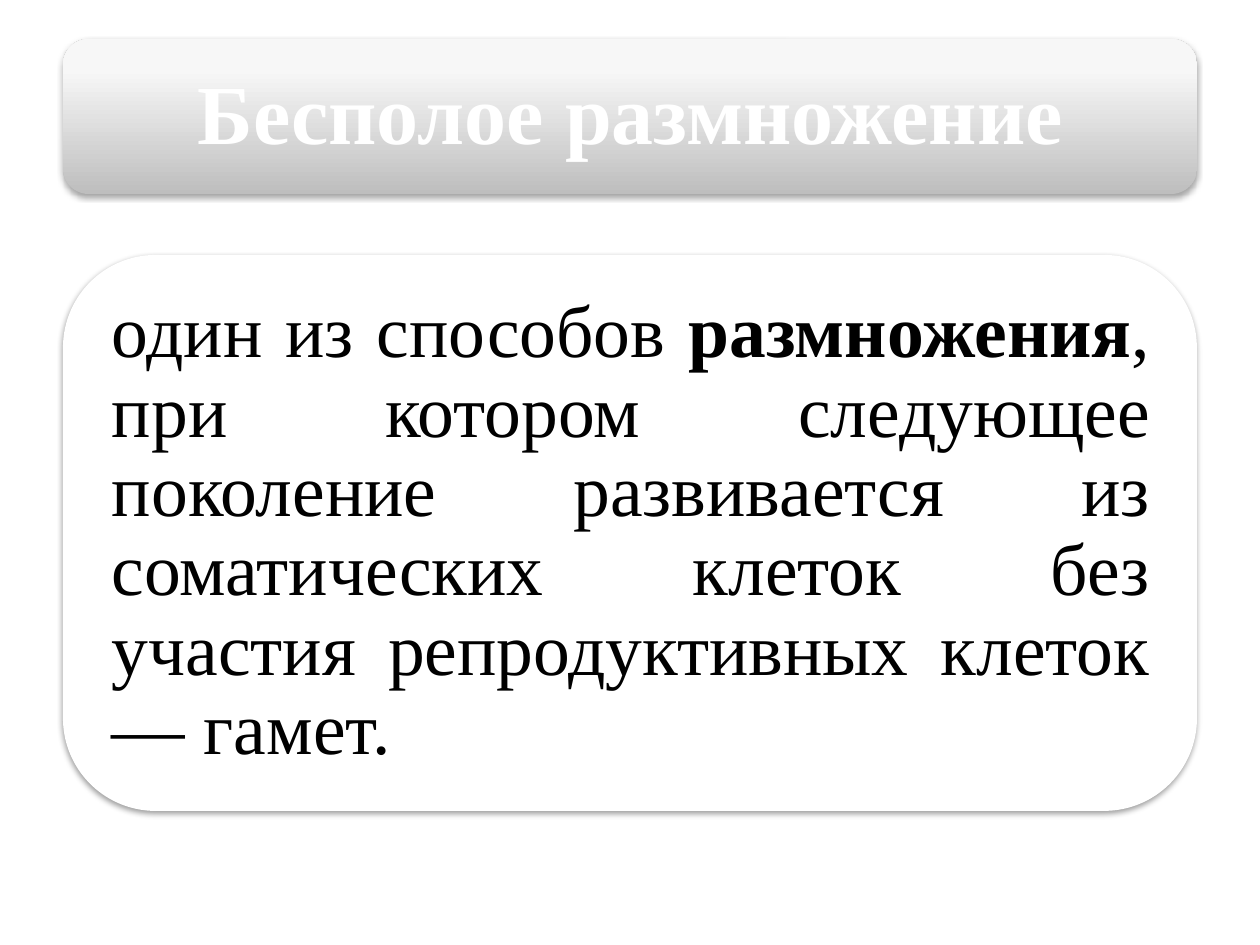
"""Builds the slide that defines asexual reproduction."""
from copy import deepcopy
from dataclasses import dataclass

from lxml.etree import SubElement
from pptx import Presentation
from pptx.dml.color import RGBColor
from pptx.enum.shapes import MSO_SHAPE
from pptx.enum.text import MSO_ANCHOR, MSO_AUTO_SIZE, PP_ALIGN
from pptx.oxml.ns import qn
from pptx.util import Emu, Pt

PX_PER_INCH = 126


@dataclass(frozen=True)
class Theme:
    font: str = "Times New Roman"
    title_size: int = 48
    body_size: int = 42
    title_ink: str = "FFFFFF"
    body_ink: str = "000000"
    paper: str = "FFFFFF"
    shade: str = "000000"
    banner: tuple = ((0, "BEBEBE"), (0.8, "F7F7F7"), (1, "F8F8F8"))


THEME = Theme()

TITLE = "Бесполое размножение"
DEFINITION = (
    ("один из способов ", False),
    ("размножения", True),
    (", при котором следующее поколение развивается из соматических клеток "
     "без участия репродуктивных клеток — гамет.", False),
)


def px(length):
    return Emu(round(length * 914400 / PX_PER_INCH))


def rgb(color):
    return RGBColor.from_string(color)


def fill_banner(fill):
    fill.gradient()
    fill.gradient_angle = 90
    last_stop = fill._fill._gradFill.gsLst[-1]
    last_stop.addnext(deepcopy(last_stop))
    for stop, (position, color) in zip(fill.gradient_stops, THEME.banner):
        stop.position = position
        stop.color.rgb = rgb(color)


def cast_shadow(panel, distance, opacity):
    panel.shadow.inherit = False
    effects = panel._element.spPr.find(qn("a:effectLst"))
    shadow = SubElement(effects, qn("a:outerShdw"), blurRad=str(Pt(3.1)),
                        dist=str(Pt(distance)), dir="5400000", rotWithShape="0")
    color = SubElement(shadow, qn("a:srgbClr"), val=THEME.shade)
    SubElement(color, qn("a:alpha"), val=str(opacity * 1000))


def add_panel(slide, box, shadow_distance, shadow_opacity):
    panel = slide.shapes.add_shape(MSO_SHAPE.ROUNDED_RECTANGLE, *map(px, box))
    panel.line.fill.background()
    cast_shadow(panel, shadow_distance, shadow_opacity)
    return panel


def place_text(holder, box, inset, pieces, align, size, ink):
    holder.left, holder.top, holder.width, holder.height = map(px, box)
    frame = holder.text_frame
    frame.word_wrap = True
    frame.auto_size = MSO_AUTO_SIZE.NONE
    frame.vertical_anchor = MSO_ANCHOR.MIDDLE
    frame.margin_left = frame.margin_right = px(inset)
    frame.margin_top = frame.margin_bottom = px(inset)
    paragraph = frame.paragraphs[0]
    paragraph.alignment = align
    paragraph.line_spacing = 0.9
    paragraph.space_after = Pt(0)
    spacing = paragraph._p.pPr.find(qn("a:spcAft"))
    spacing.clear()
    SubElement(spacing, qn("a:spcPct"), val="35000")
    paragraph.font.name = THEME.font
    paragraph.font.size = Pt(size)
    paragraph.font.color.rgb = rgb(ink)
    for words, bold in pieces:
        run = paragraph.add_run()
        run.text = words
        run.font.bold = bold


def add_title(slide):
    banner = add_panel(slide, (63, 39, 1134, 155), 1.8, 35)
    fill_banner(banner.fill)
    title = slide.shapes.title
    banner._element.addnext(title._element)
    place_text(title, (71, 47, 1119, 140), 25, [(TITLE, True)],
               PP_ALIGN.CENTER, THEME.title_size, THEME.title_ink)


def add_definition(slide):
    card = add_panel(slide, (63, 255, 1134, 556), 1.6, 38)
    card.fill.solid()
    card.fill.fore_color.rgb = rgb(THEME.paper)
    box = (91, 282, 1080, 501)
    definition = slide.shapes.add_textbox(*map(px, box))
    place_text(definition, box, 21, DEFINITION,
               PP_ALIGN.JUSTIFY, THEME.body_size, THEME.body_ink)


def main():
    deck = Presentation()
    deck.slide_width, deck.slide_height = px(1260), px(945)
    slide = deck.slides.add_slide(deck.slide_layouts[5])
    add_title(slide)
    add_definition(slide)
    deck.save("out.pptx")


if __name__ == "__main__":
    main()
